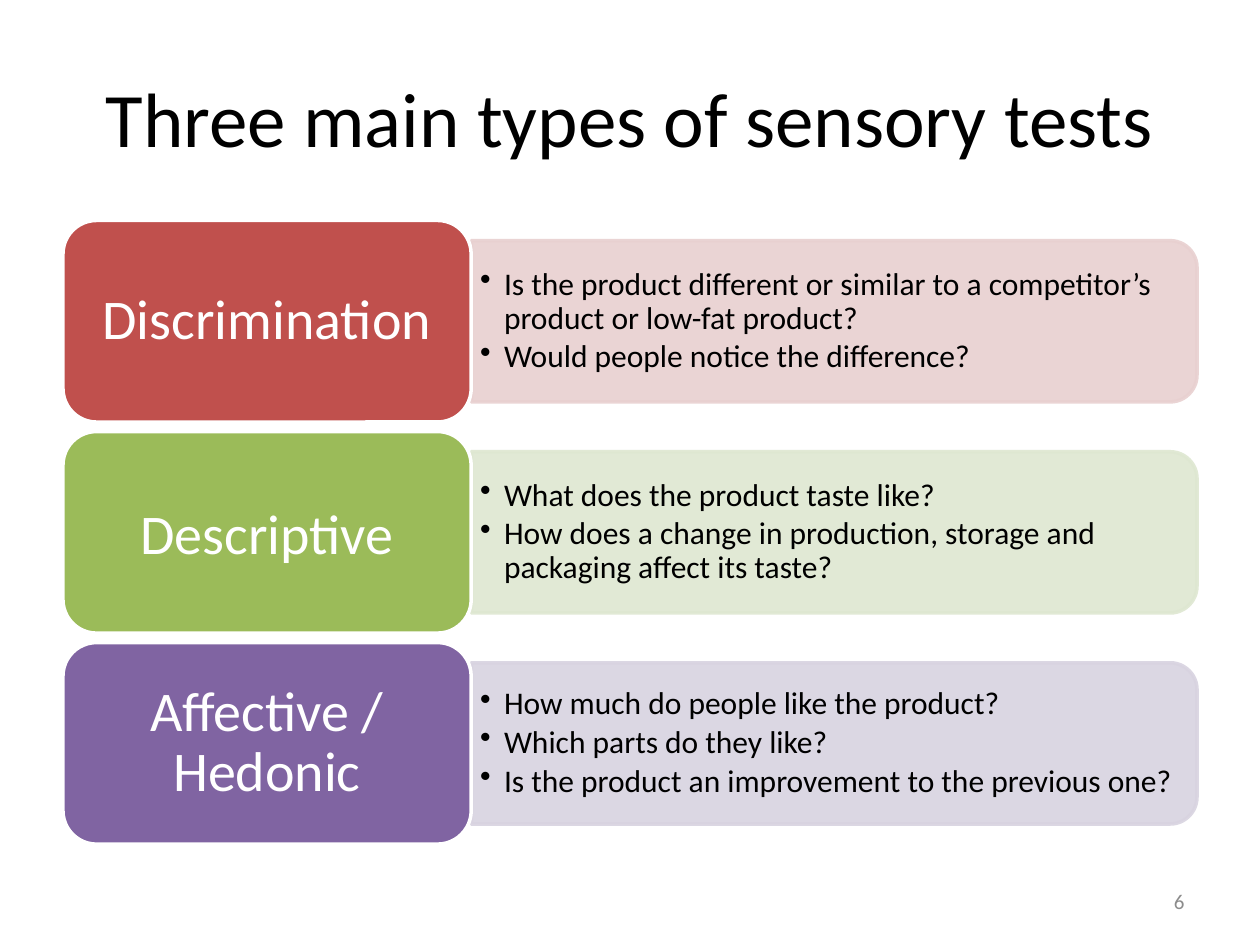
from lxml import etree
from pptx import Presentation
from pptx import util as u
from pptx.dml.color import RGBColor
from pptx.enum import shapes, text
from pptx.oxml.ns import qn

COLOURS = {
    "black": "000000", "white": "FFFFFF", "grey": "8C8C8C",
    "red": "C0504D", "pale red": "E8D0D0",
    "green": "9BBB59", "pale green": "DEE7D1",
    "purple": "8064A2", "pale purple": "D8D3E0",
}
# Name, colour, line spacing of the name, questions
TESTS = [
    ("Discrimination", "red", 0.9, [
        "Is the product different or similar to a competitor’s product or low-fat product?",
        "Would people notice the difference?"]),
    ("Descriptive", "green", 1.0, [
        "What does the product taste like?",
        "How does a change in production, storage and packaging affect its taste?"]),
    ("Affective / Hedonic", "purple", 0.9, [
        "How much do people like the product?",
        "Which parts do they like?",
        "Is the product an improvement to the previous one?"]),
]
LEFT, RIGHT, TOP = 0.5, 9.5, 1.75
LABEL_WIDTH, LABEL_HEIGHT, ROW_STEP = 3.24, 1.6, 1.675
PANEL_HEIGHT, LIST_WIDTH, LIST_HEIGHT = 1.28, 5.7, 1.15


class SlideBuilder:
    font = "Calibri"
    opacity = 90

    def __init__(self, page):
        self.page = page

    def colour(self, name):
        return RGBColor.from_string(COLOURS[name])

    def fill_text(self, frame, lines, size, colour, align, margins=(0.1, 0.05), **spacing):
        """Fill a text frame, one paragraph per line; margins are (sides, top and bottom)."""
        side, edge = (u.Inches(margin) for margin in margins)
        layout = {"word_wrap": True, "vertical_anchor": text.MSO_ANCHOR.MIDDLE,
                  "auto_size": text.MSO_AUTO_SIZE.NONE,
                  "margin_left": side, "margin_right": side,
                  "margin_top": edge, "margin_bottom": edge}
        for name, value in layout.items():
            setattr(frame, name, value)
        for index, line in enumerate(lines):
            para = frame.paragraphs[0] if index == 0 else frame.add_paragraph()
            for name, value in {"alignment": align, **spacing}.items():
                setattr(para, name, value)
            span = para.add_run()
            span.text = line
            for name, value in {"name": self.font, "size": u.Pt(size)}.items():
                setattr(span.font, name, value)
            span.font.color.rgb = self.colour(colour)

    def title(self, words, *place):
        box = self.page.shapes.title
        box.left, box.top, box.width, box.height = map(u.Inches, place)
        self.fill_text(box.text_frame, [words], 44, "black", text.PP_ALIGN.CENTER)

    def text_box(self, place, lines, size, colour, align, **options):
        box = self.page.shapes.add_textbox(*map(u.Inches, place))
        self.fill_text(box.text_frame, lines, size, colour, align, **options)
        return box

    def bullets(self, place, lines):
        box = self.text_box(place, lines, 18, "black", text.PP_ALIGN.LEFT,
                            margins=(0.07, 0.04), line_spacing=0.9, space_after=u.Pt(2.7))
        indent = u.Inches(0.19)
        for para in box.text_frame.paragraphs:
            props = para._p.get_or_add_pPr()
            props.set("marL", str(indent))
            props.set("indent", str(-indent))
            etree.SubElement(props, qn("a:buChar")).set("char", "•")

    def block(self, kind, place, fill, line):
        shape = self.page.shapes.add_shape(kind, *map(u.Inches, place))
        shape.shadow.inherit = False
        shape.fill.solid()
        shape.fill.fore_color.rgb = self.colour(fill)
        shape.line.color.rgb = self.colour(line)
        shape.line.width = u.Pt(2)
        return shape

    def panel(self, left, middle, width, height, colour):
        """Draw a see-through panel rounded on its right side, by turning one rounded on top."""
        centre = left + width / 2
        place = (centre - height / 2, middle - width / 2, height, width)
        shape = self.block(shapes.MSO_SHAPE.ROUND_2_SAME_RECTANGLE, place, colour, colour)
        shape.rotation = 90
        for tint in shape._element.spPr.iter(qn("a:srgbClr")):
            etree.SubElement(tint, qn("a:alpha")).set("val", str(self.opacity * 1000))

    def label(self, place, words, colour, line_spacing):
        shape = self.block(shapes.MSO_SHAPE.ROUNDED_RECTANGLE, place, colour, "white")
        self.fill_text(shape.text_frame, [words], 32, "white", text.PP_ALIGN.CENTER,
                       margins=(0.13, 0.07), line_spacing=line_spacing)


def main():
    deck = Presentation()
    deck.slide_width, deck.slide_height = u.Inches(10), u.Inches(7.5)
    builder = SlideBuilder(deck.slides.add_slide(deck.slide_layouts.get_by_name("Title Only")))
    builder.title("Three main types of sensory tests", LEFT, 0.3, RIGHT - LEFT, 1.25)

    panel_left = LEFT + LABEL_WIDTH
    for row, (name, colour, line_spacing, questions) in enumerate(TESTS):
        top = TOP + row * ROW_STEP
        middle = top + LABEL_HEIGHT / 2
        builder.panel(panel_left, middle, RIGHT - panel_left, PANEL_HEIGHT, f"pale {colour}")
        builder.bullets((panel_left, middle - LIST_HEIGHT / 2, LIST_WIDTH, LIST_HEIGHT), questions)
        builder.label((LEFT, top, LABEL_WIDTH, LABEL_HEIGHT), name, colour, line_spacing)

    builder.text_box((7.17, 6.95, 2.33, 0.4), ["6"], 12, "grey", text.PP_ALIGN.RIGHT)
    deck.save("out.pptx")


if __name__ == "__main__":
    main()
